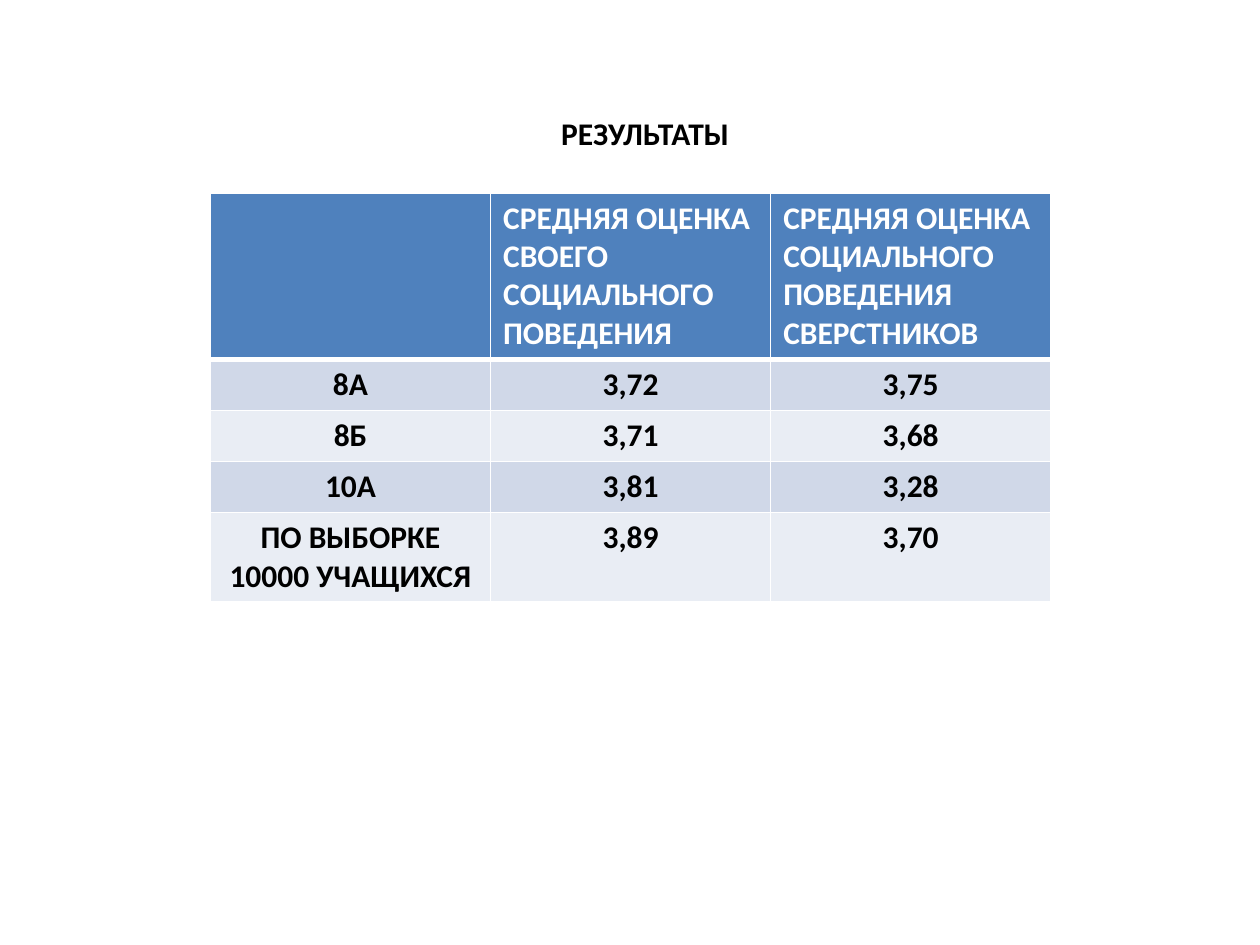
from dataclasses import dataclass
from lxml.etree import SubElement
from pptx import Presentation
from pptx.dml.color import RGBColor
from pptx.enum.text import PP_ALIGN
from pptx.oxml.ns import qn
from pptx.util import Inches, Pt


@dataclass(frozen=True)
class Theme:
    font: str = "Calibri"
    size: int = 18
    header: str = "4F81BD"
    bands: tuple = ("D0D8E8", "E9EDF4")
    white: str = "FFFFFF"
    black: str = "000000"


theme = Theme()


def style_text(tf, color, align):
    for p in tf.paragraphs:
        p.alignment = align
        p.font.size = Pt(theme.size)
        for r in p.runs:
            r.font.name = theme.font
            r.font.size = Pt(theme.size)
            r.font.bold = True
            r.font.color.rgb = RGBColor.from_string(color)


def add_borders(cell, widths):
    tc_pr = cell._tc.get_or_add_tcPr()
    for i, (side, width) in enumerate(widths.items()):
        ln = SubElement(tc_pr, qn(f"a:ln{side}"), w=str(Pt(width)))
        fill = SubElement(ln, qn("a:solidFill"))
        SubElement(fill, qn("a:srgbClr"), val=theme.white)
        tc_pr.insert(i, ln)


prs = Presentation()
prs.slide_width = Inches(10)
prs.slide_height = Inches(7.5)
s = prs.slides.add_slide(prs.slide_layouts[6])

rows = [
    ("", "СРЕДНЯЯ ОЦЕНКА СВОЕГО СОЦИАЛЬНОГО ПОВЕДЕНИЯ",
     "СРЕДНЯЯ ОЦЕНКА СОЦИАЛЬНОГО ПОВЕДЕНИЯ СВЕРСТНИКОВ"),
    ("8А", "3,72", "3,75"),
    ("8Б", "3,71", "3,68"),
    ("10А", "3,81", "3,28"),
    ("ПО ВЫБОРКЕ 10000 УЧАЩИХСЯ", "3,89", "3,70"),
]
heights = [1.31, 0.4, 0.4, 0.4, 0.7]

table = s.shapes.add_table(
    len(rows), len(rows[0]), Inches(1.67), Inches(1.53),
    Inches(6.67), Inches(sum(heights))).table

for i, (values, height) in enumerate(zip(rows, heights)):
    table.rows[i].height = Inches(height)
    is_header = i == 0
    band = theme.header if is_header else theme.bands[(i - 1) % 2]
    color = theme.white if is_header else theme.black
    align = PP_ALIGN.LEFT if is_header else PP_ALIGN.CENTER
    widths = {"L": 1, "R": 1, "T": 3 if i == 1 else 1, "B": 3 if is_header else 1}
    for j, value in enumerate(values):
        cell = table.cell(i, j)
        cell.text_frame.text = value
        cell.fill.solid()
        cell.fill.fore_color.rgb = RGBColor.from_string(band)
        style_text(cell.text_frame, color, align)
        add_borders(cell, widths)

title = s.shapes.add_textbox(Inches(3.27), Inches(0.86), Inches(3.7), Inches(0.4))
title.text_frame.word_wrap = True
title.text_frame.text = "РЕЗУЛЬТАТЫ"
style_text(title.text_frame, theme.black, PP_ALIGN.CENTER)

prs.save("out.pptx")
